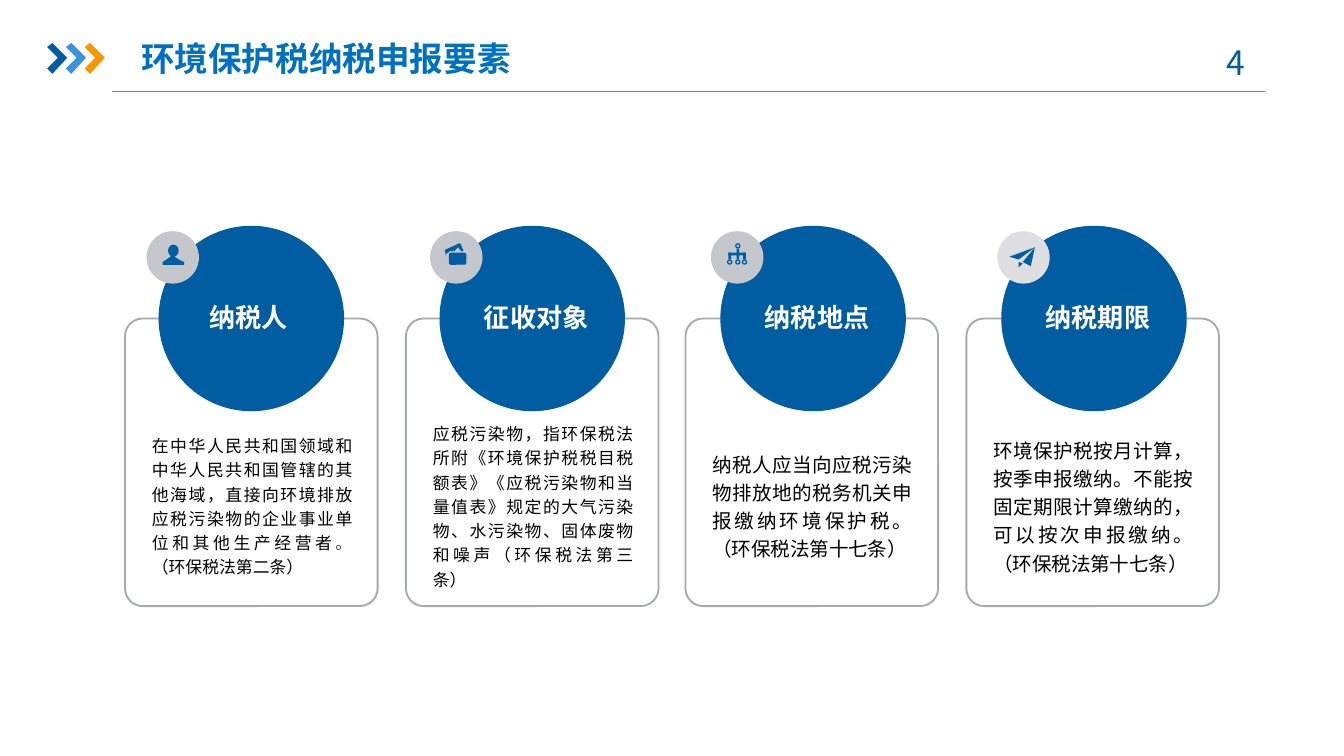
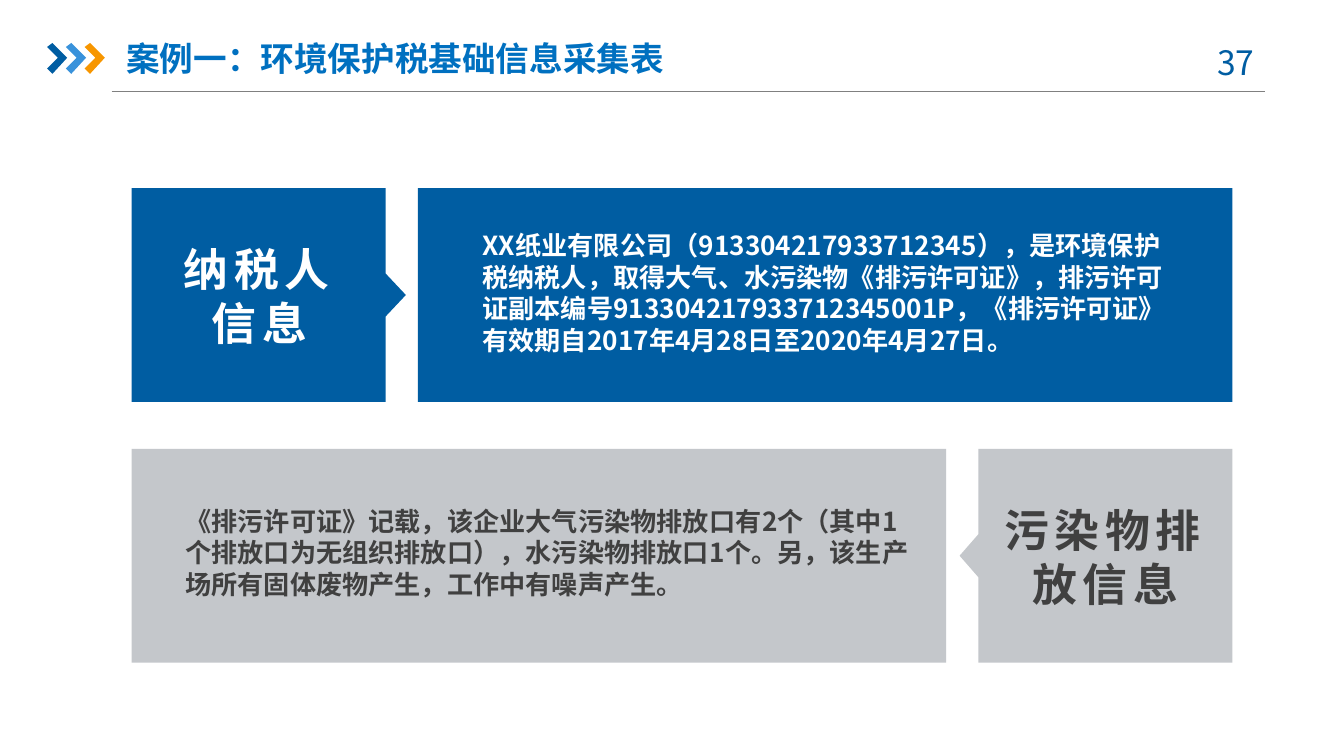
from lxml.etree import SubElement
from pptx import Presentation
from pptx.dml.color import RGBColor
from pptx.enum.shapes import MSO_CONNECTOR, MSO_SHAPE
from pptx.enum.text import MSO_ANCHOR, MSO_AUTO_SIZE, PP_ALIGN
from pptx.oxml.ns import qn
from pptx.util import Inches, Pt

FONT = "Noto Sans CJK SC"
COLORS = {
    "blue": "005DA2", "sky": "3992DB", "orange": "F79600", "title": "0070C0",
    "silver": "C4C7CB", "pale": "DCDEE0", "border": "A6AAA9", "rule": "808080",
    "dark": "404040", "black": "000000", "white": "FFFFFF",
}
RGB = {name: RGBColor.from_string(value) for name, value in COLORS.items()}


def add_filled(slide, color, geometry, preset=None):
    """Add a preset in the box (left, top, width, height), or a polygon through points."""
    if preset is None:
        points = [(Inches(x), Inches(y)) for x, y in geometry]
        builder = slide.shapes.build_freeform(*points[0])
        builder.add_line_segments(points[1:], close=True)
        shape = builder.convert_to_shape()
    else:
        shape = slide.shapes.add_shape(preset, *map(Inches, geometry))
    shape.shadow.inherit = False
    shape.fill.solid()
    shape.fill.fore_color.rgb = RGB[color]
    shape.line.fill.background()
    return shape


def write_text(shape, pieces, size, color, bold=False, align=PP_ALIGN.LEFT,
               anchor=MSO_ANCHOR.TOP, line_spacing=1.0, letter_spacing=0):
    """Fill a shape with one paragraph, one run for each piece."""
    frame = shape.text_frame
    frame.word_wrap = True
    frame.auto_size = MSO_AUTO_SIZE.NONE
    frame.vertical_anchor = anchor
    frame.margin_left = frame.margin_right = 0
    frame.margin_top = frame.margin_bottom = 0
    paragraph = frame.paragraphs[0]
    paragraph.alignment = align
    paragraph.line_spacing = line_spacing
    for piece in pieces:
        paragraph.add_run().text = piece
    font = paragraph.font
    font.name, font.size, font.bold = FONT, Pt(size), bold
    font.color.rgb = RGB[color]
    defaults = paragraph._p.pPr.find(qn("a:defRPr"))
    SubElement(defaults, qn("a:ea")).set("typeface", FONT)
    if letter_spacing:
        defaults.set("spc", str(letter_spacing * 100))
    return paragraph


presentation = Presentation()
presentation.slide_width = Inches(10)
presentation.slide_height = Inches(10) * 9 // 16

# Shared header
slides = []
for title_text, title_width, title_align, number in (
    ("环境保护税纳税申报要素", 2.97, PP_ALIGN.CENTER, "4"),
    ("案例一：环境保护税基础信息采集表", 4.38, PP_ALIGN.LEFT, "37"),
):
    slide = presentation.slides.add_slide(presentation.slide_layouts[5])
    slides.append(slide)
    title = slide.shapes.title
    title.left, title.top = Inches(0.94), Inches(0.22)
    title.width, title.height = Inches(title_width), Inches(0.42)
    write_text(title, [title_text], 18, "title", True, title_align, MSO_ANCHOR.MIDDLE)

    rule = slide.shapes.add_connector(
        MSO_CONNECTOR.STRAIGHT, Inches(0.83), Inches(0.68), Inches(9.41), Inches(0.68))
    rule.line.color.rgb = RGB["rule"]
    rule.line.width = Pt(0.75)
    SubElement(rule._element.spPr, qn("a:effectLst"))

    for index, color in enumerate(("blue", "sky", "orange")):
        left = 0.35 + 0.14 * index
        add_filled(slide, color, [
            (left, 0.35), (left + 0.04, 0.32), (left + 0.15, 0.43),
            (left + 0.04, 0.55), (left, 0.51), (left + 0.08, 0.43)])

    number_box = slide.shapes.add_textbox(
        Inches(8.83), Inches(0.31), Inches(0.73), Inches(0.3))
    write_text(number_box, [number], 18, "blue", align=PP_ALIGN.CENTER)

elements_slide, case_slide = slides

# Four tax elements: card left, label, label left, badge left, badge colour, text size, text
CARDS = [
    (0.93, "纳税人", 1.2, 1.09, "silver", 9,
     ["在中华人民共和国领域和中华人民共和国管辖的其他海域，直接向环境排放应税污染物的企业事业单位和其他生产经营者",
      "。", "（环保税法第二条）"]),
    (3.02, "征收对象", 3.34, 3.2, "silver", 9,
     ["应税污染物，指环保税法所附《环境保护税税目税额表》《应税污染物和当量值表》规定的大气污染物、"
      "水污染物、固体废物和噪声（环保税法第三条）"]),
    (5.1, "纳税地点", 5.43, 5.29, "silver", 10.5,
     ["纳税人应当向应税污染物排放地的税务机关申报缴纳环境保护税。（环保税法第十七条）"]),
    (7.19, "纳税期限", 7.52, 7.42, "pale", 10.5,
     ["环境保护税按月计算，按季申报缴纳。不能按固定期限计算缴纳的，可以按次申报缴纳。 （环保税法第十七条）"]),
]
CIRCLE_PITCH = 2.09

for index, (card_left, label, label_left, badge_left, badge_color,
            size, pieces) in enumerate(CARDS):
    card = elements_slide.shapes.add_shape(
        MSO_SHAPE.ROUNDED_RECTANGLE,
        Inches(card_left), Inches(2.37), Inches(1.88), Inches(2.14))
    card.adjustments[0] = 0.07
    card.shadow.inherit = False
    card.fill.background()
    card.line.color.rgb = RGB["border"]
    card.line.width = Pt(1)

    add_filled(elements_slide, "blue", (1.18 + CIRCLE_PITCH * index, 1.68, 1.38, 1.38),
               MSO_SHAPE.OVAL)
    add_filled(elements_slide, badge_color, (badge_left, 1.72, 0.39, 0.39), MSO_SHAPE.OVAL)

    label_box = elements_slide.shapes.add_textbox(
        Inches(label_left), Inches(2.14), Inches(1.3), Inches(0.47))
    write_text(label_box, [label], 14, "white", True, PP_ALIGN.CENTER, MSO_ANCHOR.MIDDLE, 0.9)

    body_box = elements_slide.shapes.add_textbox(
        Inches(card_left + 0.2), Inches(3.29), Inches(1.49), Inches(0.93))
    paragraph = write_text(body_box, pieces, size, "black", align=PP_ALIGN.JUSTIFY,
                           anchor=MSO_ANCHOR.MIDDLE, line_spacing=1.2)
    for run in paragraph.runs:
        if run.text == "。":
            run.font.color.rgb = RGB["dark"]

# Badge icons: person, pictures, hierarchy, paper plane
ICON_PRESETS = [
    (MSO_SHAPE.OVAL, (1.25, 1.82, 0.08, 0.09)),
    (MSO_SHAPE.ROUNDED_RECTANGLE, (3.34, 1.88, 0.13, 0.09)),
    (MSO_SHAPE.DONUT, (5.47, 1.81, 0.04, 0.04)),
    (MSO_SHAPE.RECTANGLE, (5.48, 1.85, 0.02, 0.08)),
    (MSO_SHAPE.RECTANGLE, (5.42, 1.88, 0.13, 0.02)),
    (MSO_SHAPE.RECTANGLE, (5.42, 1.88, 0.02, 0.05)),
    (MSO_SHAPE.RECTANGLE, (5.53, 1.88, 0.02, 0.05)),
]
ICON_PRESETS += [(MSO_SHAPE.DONUT, (left, 1.93, 0.04, 0.04)) for left in (5.41, 5.47, 5.52)]
for preset, box in ICON_PRESETS:
    add_filled(elements_slide, "blue", box, preset)

ICON_POLYGONS = [
    [(1.27, 1.89), (1.31, 1.89), (1.3, 1.91), (1.33, 1.93), (1.37, 1.95),
     (1.37, 1.97), (1.21, 1.97), (1.21, 1.95), (1.24, 1.93), (1.27, 1.91)],
    [(3.31, 1.86), (3.42, 1.81), (3.43, 1.82), (3.45, 1.87), (3.43, 1.87),
     (3.41, 1.84), (3.38, 1.87), (3.35, 1.87), (3.32, 1.89), (3.32, 1.91)],
    [(7.51, 1.91), (7.7, 1.84), (7.58, 1.93)],
    [(7.7, 1.84), (7.67, 1.98), (7.61, 1.95)],
    [(7.58, 1.95), (7.61, 1.96), (7.58, 1.99)],
]
for points in ICON_POLYGONS:
    add_filled(elements_slide, "blue", points)

# Case rows: colours, top, panel left, tag edges (flat, arrow, tip), tag text, panel text
CASE_ROWS = [
    ("blue", "white", 1.4, 3.11, (0.98, 2.87, 3.02),
     "纳税人信息", (1.3, 1.8, 1.26, 0.81),
     "XX纸业有限公司（913304217933712345），是环境保护税纳税人，取得大气、水污染物《排污许可证》，"
     "排污许可证副本编号913304217933712345001P，《排污许可证》有效期自2017年4月28日至2020年4月27日。",
     (3.59, 1.71, 5.2, 0.94)),
    ("silver", "dark", 3.34, 0.98, (9.17, 7.28, 7.14),
     "污染物排放信息", (7.44, 3.74, 1.57, 0.81),
     "《排污许可证》记载，该企业大气污染物排放口有2个（其中1个排放口为无组织排放口），"
     "水污染物排放口1个。另，该生产场所有固体废物产生，工作中有噪声产生。",
     (1.38, 3.76, 5.43, 0.71)),
]
ROW_HEIGHT = 1.59

for (fill, ink, top, panel_left, (flat, arrow, tip),
     tag_text, tag_box, panel_text, panel_box) in CASE_ROWS:
    bottom = top + ROW_HEIGHT
    middle = top + ROW_HEIGHT / 2
    add_filled(case_slide, fill, (panel_left, top, 6.06, ROW_HEIGHT), MSO_SHAPE.RECTANGLE)
    add_filled(case_slide, fill, [
        (flat, top), (arrow, top), (arrow, middle - 0.16), (tip, middle),
        (arrow, middle + 0.16), (arrow, bottom), (flat, bottom)])
    panel = case_slide.shapes.add_textbox(*map(Inches, panel_box))
    write_text(panel, [panel_text], 14, ink, True)
    tag = case_slide.shapes.add_textbox(*map(Inches, tag_box))
    write_text(tag, [tag_text], 24, ink, True, PP_ALIGN.CENTER, letter_spacing=3)

presentation.save("out.pptx")
